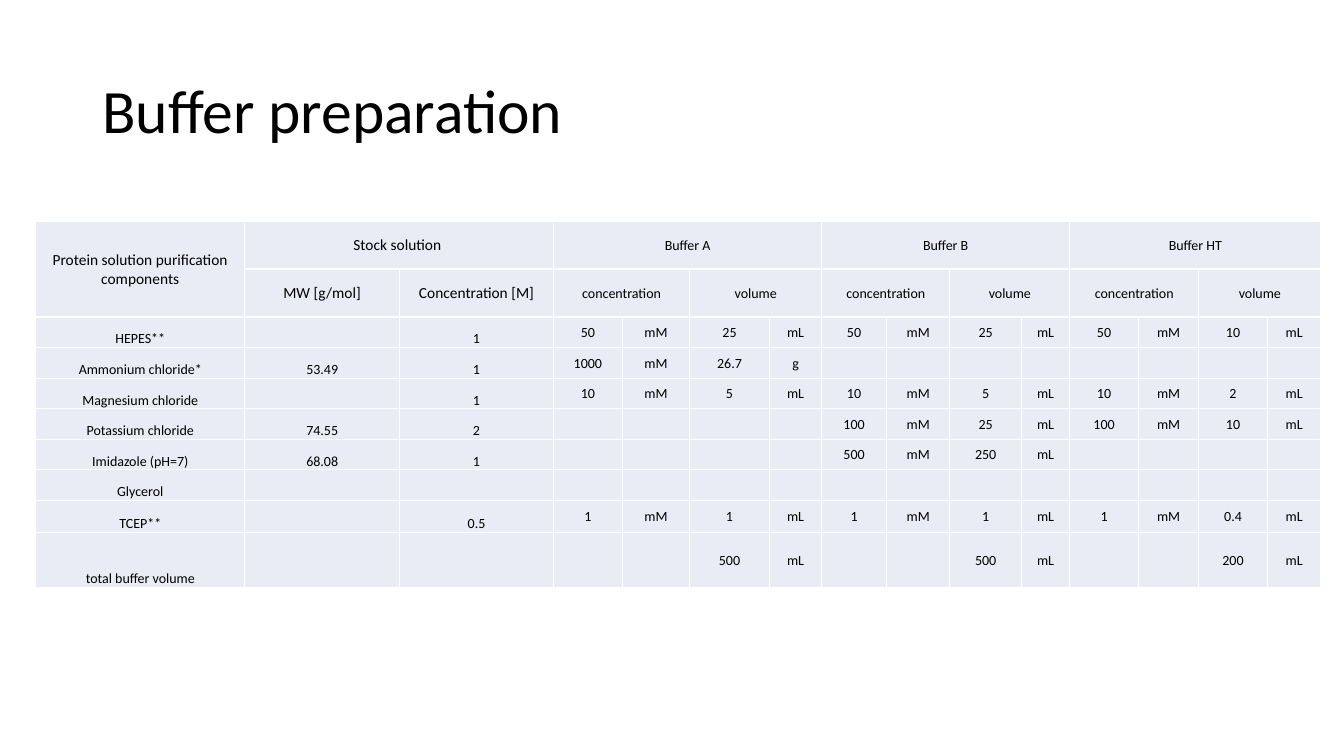
"""Build the buffer preparation slide with its recipe table."""
from lxml.etree import SubElement
from pptx import Presentation
from pptx.dml.color import RGBColor
from pptx.enum.text import MSO_ANCHOR as Anchor, PP_ALIGN as Align
from pptx.oxml.ns import qn
from pptx.util import Cm, Pt

TITLE = "Buffer preparation"
COMPONENT_HEADING = "Protein solution purification components"
STOCK_HEADING = "Stock solution "
STOCK_FIELDS = ["MW [g/mol]", "Concentration [M]"]
BUFFERS = ["Buffer A", "Buffer B", "Buffer HT"]
BUFFER_FIELDS = ["concentration", "volume"]
UNUSED = ("", "", "", "")
COMPONENTS = [
    ("HEPES**", "", "1",
     ("50", "mM", "25", "mL"), ("50", "mM", "25", "mL"), ("50", "mM", "10", "mL")),
    ("Ammonium chloride*", "53.49", "1", ("1000", "mM", "26.7", "g"), UNUSED, UNUSED),
    ("Magnesium chloride", "", "1",
     ("10", "mM", "5", "mL"), ("10", "mM", "5", "mL"), ("10", "mM", "2", "mL")),
    ("Potassium chloride", "74.55", "2",
     UNUSED, ("100", "mM", "25", "mL"), ("100", "mM", "10", "mL")),
    ("Imidazole (pH=7)", "68.08", "1", UNUSED, ("500", "mM", "250", "mL"), UNUSED),
    ("Glycerol", "", "", UNUSED, UNUSED, UNUSED),
    ("TCEP**", "", "0.5",
     ("1", "mM", "1", "mL"), ("1", "mM", "1", "mL"), ("1", "mM", "0.4", "mL")),
    ("total buffer volume", "", "",
     ("", "", "500", "mL"), ("", "", "500", "mL"), ("", "", "200", "mL")),
]
COLUMN_WIDTHS = [5.27, 3.9, 3.88, 1.73, 1.7, 2.01, 1.32, 1.63,
                 1.6, 1.8, 1.22, 1.73, 1.52, 1.73, 1.35]
ROW_HEIGHTS = [1.21] * 2 + [0.77] * 6 + [0.81, 1.38]
COLORS = {"text": "000000", "cell": "E9EBF5", "border": "FFFFFF"}
FONT = "Calibri"
FIRST_BUFFER = 1 + len(STOCK_FIELDS)
BUFFER_SPAN = 4
FIELD_SPAN = 2


def add_run(paragraph, text, size):
    run = paragraph.add_run()
    run.text = text
    run.font.name = FONT
    run.font.size = Pt(size)
    run.font.color.rgb = RGBColor.from_string(COLORS["text"])


def style_cell(cell):
    cell.margin_left = cell.margin_right = cell.margin_top = Cm(0.02)
    cell.margin_bottom = 0
    properties = cell._tc.get_or_add_tcPr()
    for side in ("a:lnL", "a:lnR", "a:lnT", "a:lnB"):
        border = SubElement(properties, qn(side), w=str(Pt(1)))
        border_fill = SubElement(border, qn("a:solidFill"))
        SubElement(border_fill, qn("a:srgbClr"), val=COLORS["border"])
    cell.fill.solid()
    cell.fill.fore_color.rgb = RGBColor.from_string(COLORS["cell"])


def write_cell(cell, text, size=10, anchor=Anchor.MIDDLE):
    cell.vertical_anchor = anchor
    paragraph = cell.text_frame.paragraphs[0]
    paragraph.alignment = Align.CENTER
    if text:
        add_run(paragraph, text, size)
    else:
        SubElement(paragraph._p, qn("a:endParaRPr"), sz=str(size * 100))


def add_title(slide):
    title = slide.shapes.add_textbox(Cm(2.33), Cm(1.01), Cm(29.21), Cm(3.68))
    frame = title.text_frame
    frame.word_wrap = True
    frame.vertical_anchor = Anchor.MIDDLE
    frame.paragraphs[0].line_spacing = 0.9
    add_run(frame.paragraphs[0], TITLE, 44)


def add_headings(recipe):
    headings = [(0, 0, 2, 1, COMPONENT_HEADING, 11),
                (0, 1, 1, len(STOCK_FIELDS), STOCK_HEADING, 11)]
    headings += [(1, 1 + i, 1, 1, field, 11) for i, field in enumerate(STOCK_FIELDS)]
    for i, buffer in enumerate(BUFFERS):
        left = FIRST_BUFFER + i * BUFFER_SPAN
        headings.append((0, left, 1, BUFFER_SPAN, buffer, 10))
        for j, field in enumerate(BUFFER_FIELDS):
            headings.append((1, left + j * FIELD_SPAN, 1, FIELD_SPAN, field, 10))
    for row, column, height, width, text, size in headings:
        cell = recipe.cell(row, column)
        if height * width > 1:
            cell.merge(recipe.cell(row + height - 1, column + width - 1))
        write_cell(cell, text, size)


def add_recipe(slide):
    recipe = slide.shapes.add_table(
        len(ROW_HEIGHTS), len(COLUMN_WIDTHS), Cm(0.9), Cm(5.57),
        Cm(sum(COLUMN_WIDTHS)), Cm(sum(ROW_HEIGHTS))).table
    recipe.first_row = recipe.horz_banding = False
    for column, width in zip(recipe.columns, COLUMN_WIDTHS):
        column.width = Cm(width)
    for row, height in zip(recipe.rows, ROW_HEIGHTS):
        row.height = Cm(height)
    for cell in recipe.iter_cells():
        style_cell(cell)
    add_headings(recipe)
    for row, (name, weight, stock, *amounts) in enumerate(COMPONENTS, start=2):
        values = [name, weight, stock, *sum(amounts, ())]
        for column, value in enumerate(values):
            anchor = Anchor.BOTTOM if column < FIRST_BUFFER else Anchor.MIDDLE
            write_cell(recipe.cell(row, column), value, anchor=anchor)


def main():
    deck = Presentation()
    deck.slide_width, deck.slide_height = Cm(33.87), Cm(19.05)
    slide = deck.slides.add_slide(deck.slide_layouts[6])
    add_title(slide)
    add_recipe(slide)
    deck.save("out.pptx")


if __name__ == "__main__":
    main()
